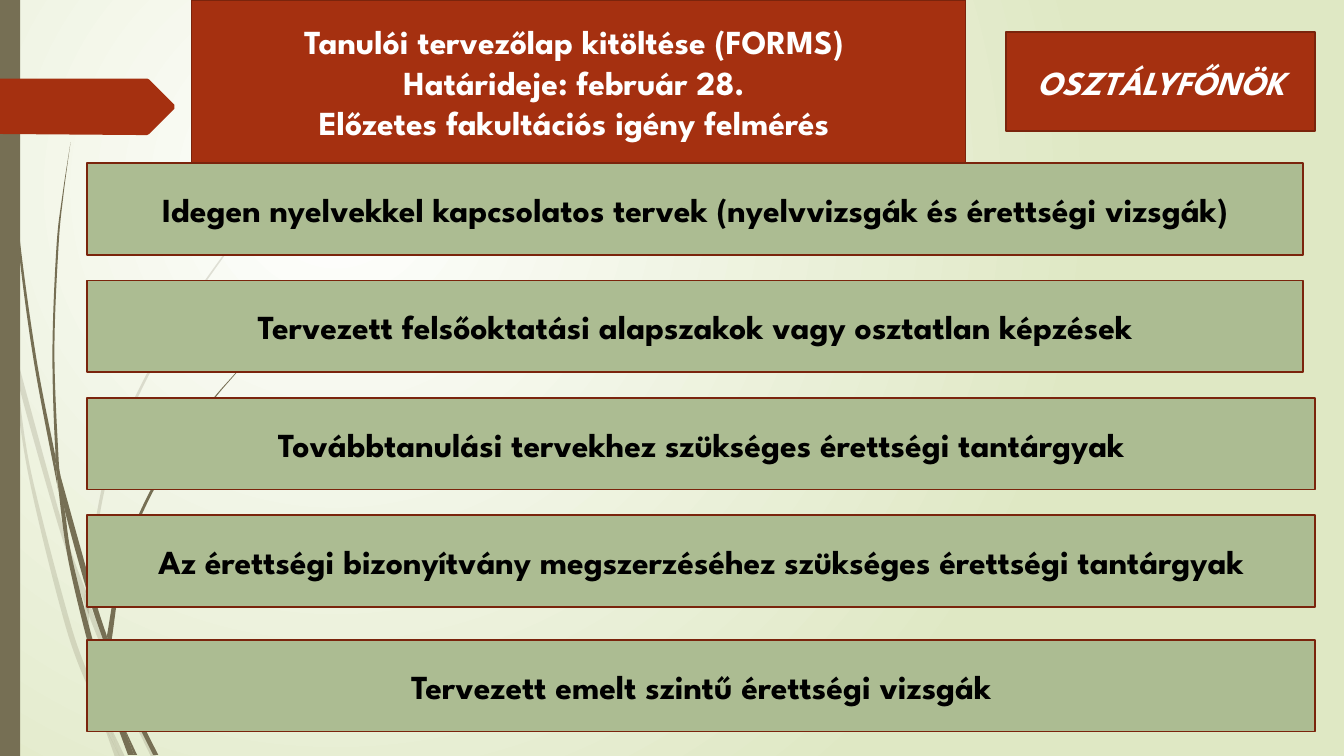
from dataclasses import dataclass

from lxml import etree
from pptx import Presentation
from pptx.dml.color import RGBColor
from pptx.enum.shapes import MSO_SHAPE
from pptx.enum.text import MSO_ANCHOR, PP_ALIGN
from pptx.oxml.ns import qn
from pptx.util import Inches, Pt

# The grid has 1333 columns and 750 rows, all of one size.
CELL = Inches(0.01)
COLUMNS, ROWS = 1333, 750

RECTANGLE = MSO_SHAPE.RECTANGLE
CENTER, MIDDLE = PP_ALIGN.CENTER, MSO_ANCHOR.MIDDLE

FONT = "League Spartan"
RUST, RUST_EDGE = "A53010", "7A240C"
SAGE, OLIVE = "ACBC92", "766F54"
WHITE, BLACK, PALE_GREEN = "FFFFFF", "000000", "DFE8C4"

BAR_LEFT, BAR_TOP, BAR_HEIGHT, BAR_STEP = 86.5, 162, 91, 116.3
NARROW, WIDE = 1206, 1218
FAINT, SOLID = 20, 100

Point = tuple[float, float]
Edge = list[Point]


@dataclass
class Box:
    text: str
    left: float
    top: float
    width: float
    height: float
    fill: str = SAGE
    color: str = BLACK
    italic: bool = False


BARS = [
    ("Idegen nyelvekkel kapcsolatos tervek (nyelvvizsgák és érettségi vizsgák)", NARROW, 0),
    ("Tervezett felsőoktatási alapszakok vagy osztatlan képzések", NARROW, 0),
    ("Továbbtanulási tervekhez szükséges érettségi tantárgyak", WIDE, 0),
    ("Az érettségi bizonyítvány megszerzéséhez szükséges érettségi tantárgyak", WIDE, 0),
    ("Tervezett emelt szintű érettségi vizsgák", WIDE, 7.5),
]

BOXES = [
    Box("Tanulói tervezőlap kitöltése (FORMS) \nHatárideje: február 28. \n"
        "Előzetes fakultációs igény felmérés ", 190, 0, 767.5, 162, RUST, WHITE),
    Box("OSZTÁLYFŐNÖK", 997.5, 32, 307, 98, RUST, WHITE, italic=True),
] + [
    Box(text, BAR_LEFT, BAR_TOP + row * BAR_STEP + drop, width, BAR_HEIGHT)
    for row, (text, width, drop) in enumerate(BARS)
]

# Each piece of a grass blade is outlined by two smooth edges, one down and one back up.
FAINT_GRASS: list[tuple[Edge, Edge]] = [
    ([(0, 299), (10, 344), (11, 350)], [(11, 350), (9, 322), (0, 282)]),
    ([(14, 345), (17, 376), (58, 522), (84, 599)], [(85, 586), (62, 520), (14, 345)]),
    ([(88, 596), (88, 610), (123, 694), (150, 751)], [(155, 751), (127, 692), (92, 607), (88, 596)]),
    ([(105, 711), (119, 751)], [(124, 751), (105, 711)]),
    ([(11, 350), (28, 470), (65, 621), (92, 693), (101, 714)],
     [(99, 707), (93, 683), (70, 619), (31, 469), (17, 376), (11, 350)]),
    ([(84, 599), (87, 646), (93, 683), (96, 692), (105, 711)],
     [(103, 706), (91, 646), (88, 610), (88, 608), (84, 599)]),
    ([(312, 153), (289, 175), (268, 197), (228, 244), (158, 348), (107, 461), (85, 584), (85, 586)],
     [(88, 596), (88, 584), (110, 462), (160, 349), (229, 245), (268, 198), (290, 175), (312, 154)]),
    ([(101, 714), (114, 751)], [(119, 751), (101, 714)]),
    ([(85, 586), (84, 599), (88, 608)], [(88, 610), (88, 596), (85, 586)]),
    ([(93, 683), (99, 707), (101, 714), (119, 751)], [(119, 751), (105, 711), (96, 692), (93, 683)]),
]
SOLID_GRASS: list[tuple[Edge, Edge]] = [
    ([(3, 0), (4, 48), (7, 110), (17, 233), (33, 355), (56, 477), (57, 481)],
     [(55, 457), (55, 453), (36, 355), (19, 232), (8, 109), (5, 48), (4, 0)]),
    ([(60, 472), (64, 505), (88, 592), (106, 645)], [(106, 633), (106, 631), (93, 590), (60, 472)]),
    ([(110, 641), (111, 656), (132, 708), (152, 749)], [(157, 749), (136, 706), (113, 649), (110, 641)]),
    ([(57, 477), (68, 557), (93, 659), (111, 708), (117, 722)],
     [(116, 717), (110, 691), (98, 657), (72, 556), (64, 505), (57, 477)]),
    ([(70, 141), (62, 193), (56, 245), (52, 349), (55, 449), (60, 472)],
     [(60, 472), (58, 453), (54, 349), (58, 245), (63, 193), (70, 141)]),
    ([(122, 719), (133, 749)], [(136, 749), (122, 719)]),
    ([(55, 449), (55, 453), (57, 477), (64, 505)], [(60, 472), (60, 472), (55, 449)]),
    ([(260, 344), (245, 358), (231, 373), (204, 405), (156, 474), (122, 551), (106, 631)],
     [(110, 641), (111, 633), (125, 552), (158, 476), (205, 406), (231, 374), (245, 359), (261, 344)]),
    ([(117, 722), (127, 749)], [(131, 749), (117, 722)]),
    ([(106, 631), (106, 633), (106, 645), (109, 651), (111, 656)], [(110, 641), (106, 631)]),
    ([(110, 691), (116, 717), (117, 722), (130, 749)], [(133, 749), (122, 719), (116, 706), (110, 691)]),
]
ARROW: Edge = [(173, 108), (148, 133), (146, 134), (136, 134), (0, 133), (0, 78),
               (136, 78), (146, 78), (148, 79), (173, 104)]


def grid(cells: float) -> int:
    return round(cells * CELL)


def rgb(color: str) -> RGBColor:
    return RGBColor.from_string(color)


def paint(shape, fill: str, line: str | None = None) -> None:
    shape.shadow.inherit = False
    shape.fill.solid()
    shape.fill.fore_color.rgb = rgb(fill)
    if line:
        shape.line.color.rgb = rgb(line)
        shape.line.width = Pt(1.25)
    else:
        shape.line.fill.background()


def add_rectangle(slide, left: float, top: float, width: float, height: float,
                  fill: str, line: str | None = None):
    shape = slide.shapes.add_shape(RECTANGLE, grid(left), grid(top), grid(width), grid(height))
    paint(shape, fill, line)
    return shape


def write(shape, text: str, *, color: str, size: float = 24, bold: bool = True,
          italic: bool = False) -> None:
    frame = shape.text_frame
    frame.word_wrap = True
    frame.vertical_anchor = MIDDLE
    frame.text = text
    for paragraph in frame.paragraphs:
        paragraph.alignment = CENTER
        font = paragraph.runs[0].font
        font.name, font.size = FONT, Pt(size)
        font.bold, font.italic = bold, italic
        font.color.rgb = rgb(color)


def add_outline(slide, points: Edge, fill: str):
    start, *others = [(grid(x), grid(y)) for x, y in points]
    builder = slide.shapes.build_freeform(*start)
    builder.add_line_segments(others, close=True)
    shape = builder.convert_to_shape()
    paint(shape, fill)
    return shape


def controls(edge: Edge, index: int) -> list[Point]:
    """Return the Bezier points that lead smoothly from one edge point to the next."""
    start, end = edge[index], edge[index + 1]
    before = edge[max(index - 1, 0)]
    after = edge[min(index + 2, len(edge) - 1)]
    return [
        (start[0] + (end[0] - before[0]) / 6, start[1] + (end[1] - before[1]) / 6),
        (end[0] - (after[0] - start[0]) / 6, end[1] - (after[1] - start[1]) / 6),
        end,
    ]


def add_grass(slide, edges: tuple[Edge, Edge], opacity: int) -> None:
    down, up = edges
    shape = add_outline(slide, down + up, OLIVE)
    lines = shape.element.findall(".//" + qn("a:lnTo"))
    for edge, first in ((down, 0), (up, len(down))):
        for index in range(len(edge) - 1):
            curve = etree.Element(qn("a:cubicBezTo"))
            for x, y in controls(edge, index):
                etree.SubElement(curve, qn("a:pt"), x=str(grid(x) - shape.left),
                                 y=str(grid(y) - shape.top))
            line = lines[first + index]
            line.getparent().replace(line, curve)
    if opacity < SOLID:
        color = shape.element.find(".//" + qn("a:srgbClr"))
        etree.SubElement(color, qn("a:alpha"), val=str(opacity * 1000))


def set_background(slide) -> None:
    fill = slide.background.fill
    fill.gradient()
    for stop, color in zip(fill.gradient_stops, (WHITE, PALE_GREEN)):
        stop.color.rgb = rgb(color)
    gradient = slide.element.find(".//" + qn("a:gradFill"))
    gradient.remove(gradient.find(qn("a:lin")))
    circle = etree.Element(qn("a:path"), path="circle")
    etree.SubElement(circle, qn("a:fillToRect"), l="50000", t="50000", r="100000", b="100000")
    gradient.find(qn("a:gsLst")).addnext(circle)


def main() -> None:
    presentation = Presentation()
    presentation.slide_width, presentation.slide_height = grid(COLUMNS), grid(ROWS)
    slide = presentation.slides.add_slide(presentation.slide_layouts[6])
    set_background(slide)
    for grass, opacity in ((FAINT_GRASS, FAINT), (SOLID_GRASS, SOLID)):
        for edges in grass:
            add_grass(slide, edges, opacity)
    add_rectangle(slide, 0, 0, 20, ROWS, OLIVE)
    add_outline(slide, ARROW, RUST)
    for box in BOXES:
        shape = add_rectangle(slide, box.left, box.top, box.width, box.height, box.fill, RUST_EDGE)
        write(shape, box.text, color=box.color, italic=box.italic)
    presentation.save("out.pptx")


if __name__ == "__main__":
    main()
